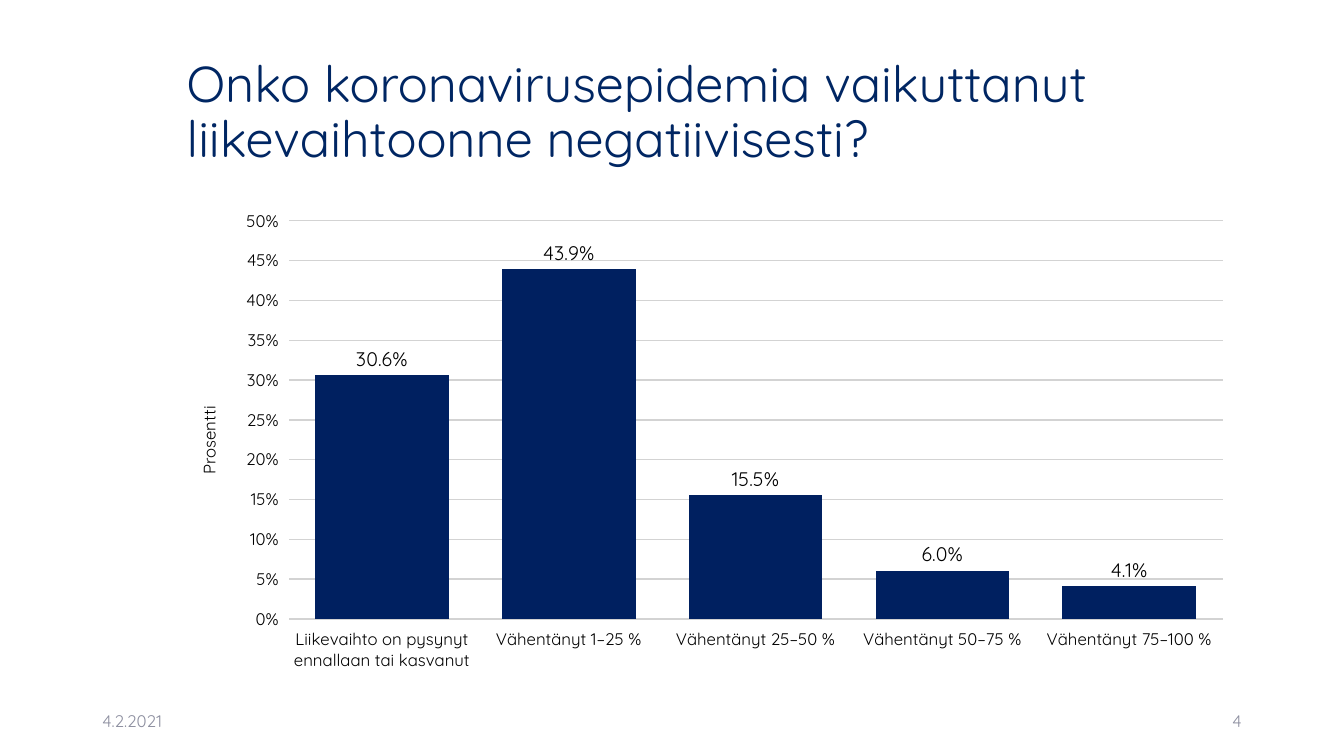
"""Build a slide with a column chart of how the epidemic affected turnover."""
from dataclasses import dataclass

from lxml import etree
from pptx import Presentation
from pptx.chart.data import CategoryChartData
from pptx.dml.color import RGBColor
from pptx.enum.chart import XL_CHART_TYPE as ChartType
from pptx.enum.chart import XL_LABEL_POSITION as LabelPosition
from pptx.enum.chart import XL_TICK_MARK as TickMark
from pptx.enum.text import MSO_ANCHOR as Anchor
from pptx.enum.text import PP_ALIGN as Align
from pptx.oxml.ns import qn
from pptx.util import Cm, Pt


@dataclass(frozen=True)
class Theme:
    font: str = "Quicksand"
    title: RGBColor = RGBColor(0x00, 0x26, 0x63)
    footer: RGBColor = RGBColor(0x8C, 0x8E, 0x9F)
    text: RGBColor = RGBColor(0x00, 0x00, 0x00)
    bar: RGBColor = RGBColor(0x00, 0x20, 0x60)
    grid: RGBColor = RGBColor(0xD3, 0xD3, 0xD3)
    title_size: Pt = Pt(36)
    label_size: Pt = Pt(14)
    small_size: Pt = Pt(12)


theme = Theme()


def style_font(font, size, color=theme.text):
    font.name = theme.font
    font.size = size
    font.bold = False
    font.color.rgb = color


def write_text(frame, text, *, size=theme.small_size, color=theme.text,
               align=Align.LEFT, spacing=1.0):
    frame.word_wrap = True
    frame.vertical_anchor = Anchor.MIDDLE
    para = frame.paragraphs[0]
    para.alignment = align
    para.line_spacing = spacing
    span = para.add_run()
    span.text = text
    style_font(span.font, size, color)


deck = Presentation()
deck.slide_width, deck.slide_height = Cm(33.87), Cm(19.05)
page = deck.slides.add_slide(deck.slide_layouts[5])

content_left, content_width = Cm(4.45), Cm(26.9)
title = page.shapes.title
title.left, title.top = content_left, Cm(1.02)
title.width, title.height = content_width, Cm(3.68)
write_text(title.text_frame,
           "Onko koronavirusepidemia vaikuttanut liikevaihtoonne negatiivisesti?",
           size=theme.title_size, color=theme.title, spacing=0.9)

for left, text, align in ((2.33, "4.2.2021", Align.LEFT), (23.92, "4", Align.RIGHT)):
    box = page.shapes.add_textbox(Cm(left), Cm(17.66), Cm(7.62), Cm(1.01))
    write_text(box.text_frame, text, color=theme.footer, align=align)

answers = {
    "Liikevaihto on pysynyt ennallaan tai kasvanut": 0.306,
    "Vähentänyt 1–25 %": 0.439,
    "Vähentänyt 25–50 %": 0.155,
    "Vähentänyt 50–75 %": 0.06,
    "Vähentänyt 75–100 %": 0.041,
}
data = CategoryChartData(number_format="0.0%")
data.categories = answers.keys()
data.add_series("Series 1", answers.values())
chart = page.shapes.add_chart(ChartType.COLUMN_CLUSTERED, content_left, Cm(5.08),
                              content_width, Cm(12.09), data).chart
chart.has_title = False
chart.has_legend = False
style_font(chart.font, theme.small_size)

for axis in (chart.category_axis, chart.value_axis):
    axis.major_tick_mark = TickMark.OUTSIDE
    axis.minor_tick_mark = TickMark.NONE
    axis.format.line.fill.background()
    style_font(axis.tick_labels.font, theme.small_size)

percent = chart.value_axis
percent.minimum_scale, percent.maximum_scale, percent.major_unit = 0, 0.5, 0.05
percent.tick_labels.number_format = "0%"
percent.tick_labels.number_format_is_linked = False
percent.major_gridlines.format.line.color.rgb = theme.grid
percent.major_gridlines.format.line.width = Pt(1)
write_text(percent.axis_title.text_frame, "Prosentti", align=Align.CENTER)

plot = chart.plots[0]
plot.gap_width = 40
plot.vary_by_categories = False
bars = plot.series[0]
bars.format.fill.solid()
bars.format.fill.fore_color.rgb = theme.bar
labels = bars.data_labels
labels.show_value = True
labels.position = LabelPosition.OUTSIDE_END
labels.number_format = "0.0%"
labels.number_format_is_linked = False
style_font(labels.font, theme.label_size)

plot_area = chart.element.find(".//" + qn("c:plotArea"))
for old_layout in plot_area.findall(qn("c:layout")):
    plot_area.remove(old_layout)
layout = etree.Element(qn("c:layout"))
plot_area.insert(0, layout)
manual = etree.SubElement(layout, qn("c:manualLayout"))
for tag, value in (("layoutTarget", "inner"), ("xMode", "edge"), ("yMode", "edge"),
                   ("x", "0.105"), ("y", "0.04"), ("w", "0.875"), ("h", "0.83")):
    etree.SubElement(manual, qn("c:" + tag)).set("val", value)

deck.save("out.pptx")
